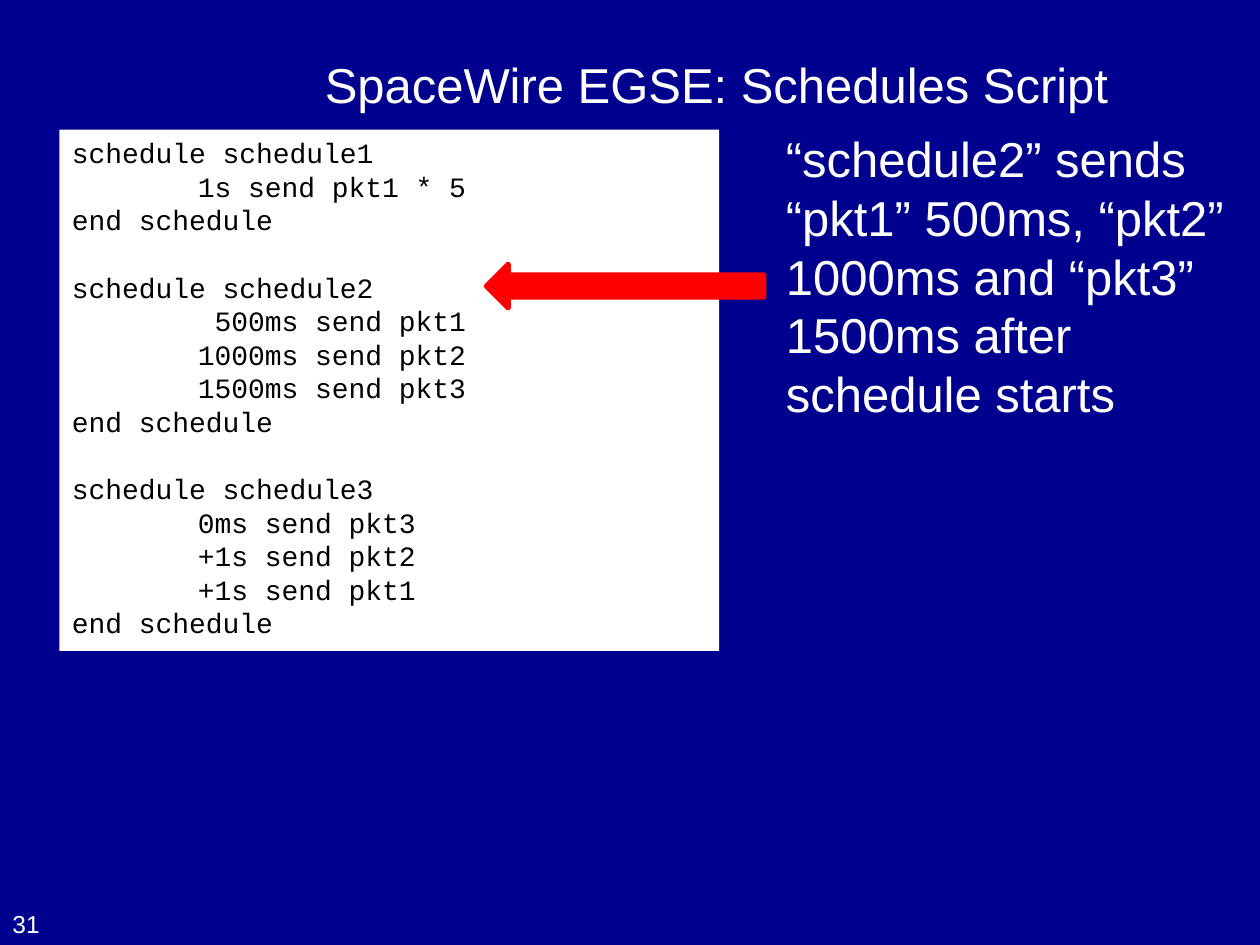
from dataclasses import dataclass
from typing import Optional

from lxml import etree
from pptx import Presentation
from pptx.dml.color import RGBColor
from pptx.enum.shapes import MSO_SHAPE
from pptx.enum.text import MSO_ANCHOR, PP_ALIGN
from pptx.oxml.ns import qn
from pptx.util import Pt

NAVY = RGBColor(0x00, 0x00, 0x8E)
WHITE = RGBColor(0xFF, 0xFF, 0xFF)
BLACK = RGBColor(0x00, 0x00, 0x00)
RED = RGBColor(0xFF, 0x00, 0x00)

TOP, MIDDLE, BOTTOM = MSO_ANCHOR.TOP, MSO_ANCHOR.MIDDLE, MSO_ANCHOR.BOTTOM
LEFT = PP_ALIGN.LEFT
RECTANGLE, LEFT_ARROW = MSO_SHAPE.RECTANGLE, MSO_SHAPE.LEFT_ARROW

LINE_FACTOR = 1.2
CODE_TAB = Pt(72)

SCHEDULES = """schedule schedule1
\t1s send pkt1 * 5
end schedule

schedule schedule2
\t 500ms send pkt1
\t1000ms send pkt2
\t1500ms send pkt3
end schedule

schedule schedule3
\t0ms send pkt3
\t+1s send pkt2
\t+1s send pkt1
end schedule"""


@dataclass
class TextBlock:
    """A block of text; place and sizes are in points."""
    text: str
    left: float
    top: float
    width: float
    height: float
    size: float
    font: str = "Arial"
    color: RGBColor = WHITE
    anchor: MSO_ANCHOR = TOP
    fill: Optional[RGBColor] = None
    tab: Optional[int] = None


def add_tab_stop(paragraph, position: int) -> None:
    tabs = etree.SubElement(paragraph._p.get_or_add_pPr(), qn("a:tabLst"))
    etree.SubElement(tabs, qn("a:tab"), pos=str(position), algn="l")


def draw_text(slide, block: TextBlock) -> None:
    place = [Pt(v) for v in (block.left, block.top, block.width, block.height)]
    if block.fill is None:
        box = slide.shapes.add_textbox(*place)
    else:
        box = slide.shapes.add_shape(RECTANGLE, *place)
        box.shadow.inherit = False
        box.fill.solid()
        box.fill.fore_color.rgb = block.fill
        box.line.fill.background()
    frame = box.text_frame
    frame.word_wrap = True
    frame.vertical_anchor = block.anchor
    frame.text = block.text
    for paragraph in frame.paragraphs:
        paragraph.alignment = LEFT
        paragraph.line_spacing = Pt(block.size * LINE_FACTOR)
        if block.tab is not None:
            add_tab_stop(paragraph, block.tab)
        paragraph.font.size = Pt(block.size)
        paragraph.font.name = block.font
        paragraph.font.color.rgb = block.color


def draw_arrow(slide, left: float, top: float, width: float, height: float) -> None:
    arrow = slide.shapes.add_shape(LEFT_ARROW, Pt(left), Pt(top), Pt(width), Pt(height))
    arrow.shadow.inherit = False
    arrow.fill.solid()
    arrow.fill.fore_color.rgb = RED
    arrow.line.color.rgb = RED
    arrow.line.width = Pt(3)


TITLE = TextBlock("SpaceWire EGSE: Schedules Script",
                  178.5, 15, 541.5, 66, 28, anchor=MIDDLE)
PAGE_NUMBER = TextBlock("31", 0, 502.5, 76, 37.5, 14, anchor=BOTTOM)
CODE = TextBlock(SCHEDULES, 34, 74, 377, 298, 16, font="Courier New",
                 color=BLACK, fill=WHITE, tab=CODE_TAB)
EXPLANATION = TextBlock(
    "“schedule2” sends “pkt1” 500ms, “pkt2” 1000ms and “pkt3” 1500ms "
    "after schedule starts", 442, 70, 284, 191.5, 28)


def main() -> None:
    prs = Presentation()
    prs.slide_width, prs.slide_height = Pt(720), Pt(540)
    slide = prs.slides.add_slide(prs.slide_layouts[6])
    slide.background.fill.solid()
    slide.background.fill.fore_color.rgb = NAVY

    # Title, page number and schedule listing
    for block in (TITLE, PAGE_NUMBER, CODE):
        draw_text(slide, block)

    # Pointer from the explanation to schedule2
    draw_arrow(slide, 278, 151, 158.5, 25)
    draw_text(slide, EXPLANATION)

    prs.save("out.pptx")


if __name__ == "__main__":
    main()
